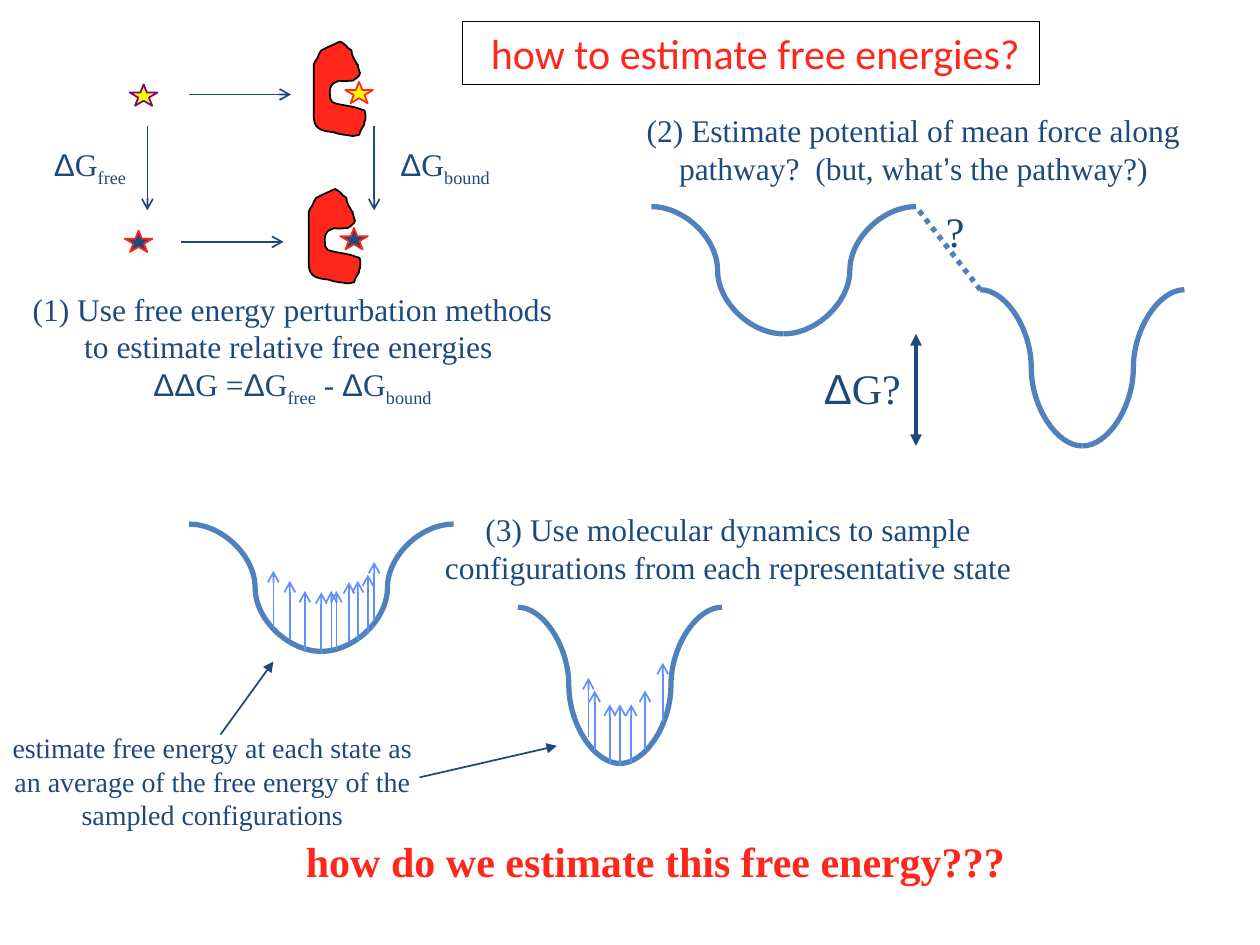
from itertools import groupby

from pptx import Presentation, util as u
from pptx.dml.color import RGBColor
from pptx.enum import dml, shapes, text
from pptx.oxml import xmlchemy as xml

PX = 9144  # EMU, 100 px to the inch
NAVY = RGBColor(0x1F, 0x49, 0x7D)
BLUE = RGBColor(0x4F, 0x81, 0xBD)
SKY = RGBColor(0x61, 0x8F, 0xFD)
RED = RGBColor(0xFF, 0x26, 0x1B)
YELLOW = RGBColor(0xFA, 0xFD, 0x00)
PURPLE = RGBColor(0x80, 0x00, 0x80)
BLACK = RGBColor(0, 0, 0)
SERIF, SANS = "Times New Roman", "Arial"
LEFT, MIDDLE = text.PP_ALIGN.LEFT, text.PP_ALIGN.CENTER

# Start point, then three points for each curve segment
PROTEIN = [
    (283, 50),
    (281, 47), (279, 44), (279, 40), (278, 39), (277, 39), (276, 38),
    (275, 36), (272, 34), (270, 33), (267, 34), (264, 36), (261, 37),
    (259, 38), (257, 39), (255, 40), (253, 42), (253, 44), (252, 46),
    (251, 47), (250, 49), (249, 51), (249, 55), (249, 59), (249, 62),
    (249, 70), (249, 78), (249, 85), (249, 86), (249, 92), (249, 94),
    (250, 104), (258, 104), (265, 105), (269, 107), (276, 107), (280, 108),
    (282, 107), (284, 108), (285, 107), (286, 107), (285, 105), (286, 104),
    (287, 102), (288, 101), (289, 99), (289, 98), (289, 96), (290, 95),
    (290, 94), (290, 92), (290, 92), (290, 89), (290, 87), (287, 87),
    (280, 84), (273, 84), (266, 82), (263, 81), (264, 81), (262, 78),
    (262, 75), (261, 71), (263, 68), (264, 67), (265, 65), (267, 65),
    (268, 65), (269, 64), (269, 64), (272, 65), (277, 64), (280, 64),
    (281, 63), (282, 63), (283, 62), (284, 61), (284, 61), (285, 60),
    (286, 59), (286, 57), (285, 56), (284, 54), (284, 54), (284, 52),
    (284, 51), (284, 51), (284, 51), (284, 51), (283, 51), (283, 51),
    (283, 51), (283, 50), (283, 50),
]
# Feet of the sampling arrows, all of one length
SAMPLES = [
    (217, 500), (230, 508), (242, 516), (255, 517), (263, 516), (267, 516),
    (277, 509), (284, 508), (292, 503), (297, 493),
    (467, 585), (472, 595), (484, 606), (492, 606), (501, 606), (512, 595),
    (526, 573),
]


def px(*vals):
    return [u.Emu(v * PX) for v in vals]


def style(obj, **vals):
    for name, val in vals.items():
        setattr(obj, name, val)


def write(para, words, size, color, bold=None):
    """Fill a paragraph; parts between underscores become subscripts."""
    for i, part in enumerate(words.split("_")):
        for sans, chars in groupby(part, lambda c: c in "Δ’"):
            run = para.add_run()
            run.text = "".join(chars)
            style(run.font, name=SANS if sans else SERIF,
                  size=u.Pt(size), bold=bold)
            run.font.color.rgb = color
            if i % 2:
                run.font._element.set("baseline", "-25000")


def label(slide, box, lines, size=18, align=MIDDLE, wrap=True,
          color=NAVY, bold=None):
    frame = slide.shapes.add_textbox(*px(*box)).text_frame
    style(frame, word_wrap=wrap,
          auto_size=text.MSO_AUTO_SIZE.SHAPE_TO_FIT_TEXT)
    for i, words in enumerate(lines):
        para = frame.add_paragraph() if i else frame.paragraphs[0]
        para.alignment = align
        write(para, words, size, color, bold)


def link(slide, ends, color=NAVY, width=1, head=None, tail=None,
         kind=shapes.MSO_CONNECTOR.STRAIGHT, dash=None):
    line = slide.shapes.add_connector(kind, *px(*ends))
    line.line.color.rgb = color
    style(line.line, width=u.Pt(width), dash_style=dash)
    pen = line.line._get_or_add_ln()
    for tag, tip in (("a:headEnd", head), ("a:tailEnd", tail)):
        if tip:
            end = xml.OxmlElement(tag)
            end.set("type", tip)
            pen.append(end)
    line._element.spPr.append(xml.OxmlElement("a:effectLst"))


def paint(shape, fill, line, width=1):
    shape.shadow.inherit = False
    if fill is None:
        shape.fill.background()
    else:
        shape.fill.solid()
        shape.fill.fore_color.rgb = fill
    shape.line.color.rgb = line
    shape.line.width = u.Pt(width)


def star(slide, x, y, fill, line):
    kind = shapes.MSO_SHAPE.STAR_5_POINT
    paint(slide.shapes.add_shape(kind, *px(x, y, 22, 17)), fill, line)


def protein(slide, dx, dy):
    pen = slide.shapes.build_freeform(*PROTEIN[0], scale=PX)
    pen.add_line_segments(PROTEIN[1:], close=True)
    shape = pen.convert_to_shape(*px(dx, dy))
    # Turn each three line segments into one cubic curve
    steps = shape._element.xpath(".//a:lnTo")
    for i in range(0, len(steps) - 2, 3):
        curve = xml.OxmlElement("a:cubicBezTo")
        steps[i].addprevious(curve)
        for step in steps[i:i + 3]:
            curve.append(step[0])
            step.getparent().remove(step)
    paint(shape, RED, BLACK)


def wells(slide, dx, dy):
    """Draw the wide and the deep energy well, moved by dx and dy."""
    for x, y, half, depth in ((622, 265, 105, 101), (859, 354, 81, 124)):
        for side in (half, -half):
            ends = (x + dx, y + dy, x + dx + side, y + dy - depth)
            link(slide, ends, BLUE, 3, kind=shapes.MSO_CONNECTOR.CURVE)


def heading(slide):
    title = slide.shapes.title
    style(title, **dict(zip(("left", "top", "width", "height"),
                            px(283, 17, 633, 50))))
    title.text_frame.vertical_anchor = text.MSO_ANCHOR.MIDDLE
    para = title.text_frame.paragraphs[0]
    para.text = "how to estimate free energies?"
    para.alignment = MIDDLE
    style(para.font, size=u.Pt(24), name="Calibri")
    para.font.color.rgb = RED
    kind = shapes.MSO_SHAPE.RECTANGLE
    frame = slide.shapes.add_shape(kind, *px(367, 17, 458, 50))
    paint(frame, None, BLACK, 0.75)


def cycle(slide):
    """Draw the thermodynamic cycle of method 1."""
    for dx, dy, fill, rim in ((0, 0, YELLOW, PURPLE), (-4, 116, NAVY, RED)):
        protein(slide, dx, dy + dy // 100)
        star(slide, 274 + dx, 65 + dy, fill, RED)
        star(slide, 103 + dx, 67 + dy, fill, rim)
    for ends in ((150, 75, 231, 75), (144, 192, 225, 192),
                 (117, 100, 117, 167), (297, 100, 297, 167)):
        link(slide, ends, tail="arrow")
    label(slide, (33, 110, 117, 40), ["ΔG_free_"], align=LEFT)
    label(slide, (308, 110, 133, 40), ["ΔG_bound_"], align=LEFT)
    label(slide, (0, 225, 458, 100), [
        " (1) Use free energy perturbation methods"
        " to estimate relative free energies",
        " ΔΔG =ΔG_free_ - ΔG_bound_"])


def pathway(slide):
    wells(slide, 0, 0)
    link(slide, (727, 265, 727, 354), width=2.25,
         head="triangle", tail="triangle")
    link(slide, (778, 230, 727, 164), BLUE, 3,
         dash=dml.MSO_LINE.ROUND_DOT)
    label(slide, (644, 283, 83, 50), ["ΔG?"], 24, LEFT)
    label(slide, (741, 158, 37, 50), ["?"], 24, LEFT, wrap=False)
    label(slide, (500, 83, 450, 70), [
        "(2) Estimate potential of mean force along pathway?"
        "  (but, what’s the pathway?)"])


def sampling(slide):
    wells(slide, -367, 252)
    for x, y in SAMPLES:
        link(slide, (x, y, x, y - 47), SKY, tail="arrow")
    label(slide, (333, 400, 490, 70), [
        "(3) Use molecular dynamics to sample configurations"
        " from each representative state"])
    label(slide, (0, 575, 337, 90), [
        "estimate free energy at each state as an average"
        " of the free energy of the sampled configurations"], 16)
    for ends in ((175, 583, 217, 525), (333, 617, 442, 592)):
        link(slide, ends, tail="triangle")
    label(slide, (233, 658, 580, 50),
          ["how do we estimate this free energy???"],
          24, LEFT, wrap=False, color=RED, bold=True)


def main():
    deck = Presentation()
    deck.slide_width, deck.slide_height = px(1000, 750)
    slide = deck.slides.add_slide(deck.slide_layouts[5])
    for draw in (heading, cycle, pathway, sampling):
        draw(slide)
    deck.save("out.pptx")


if __name__ == "__main__":
    main()
